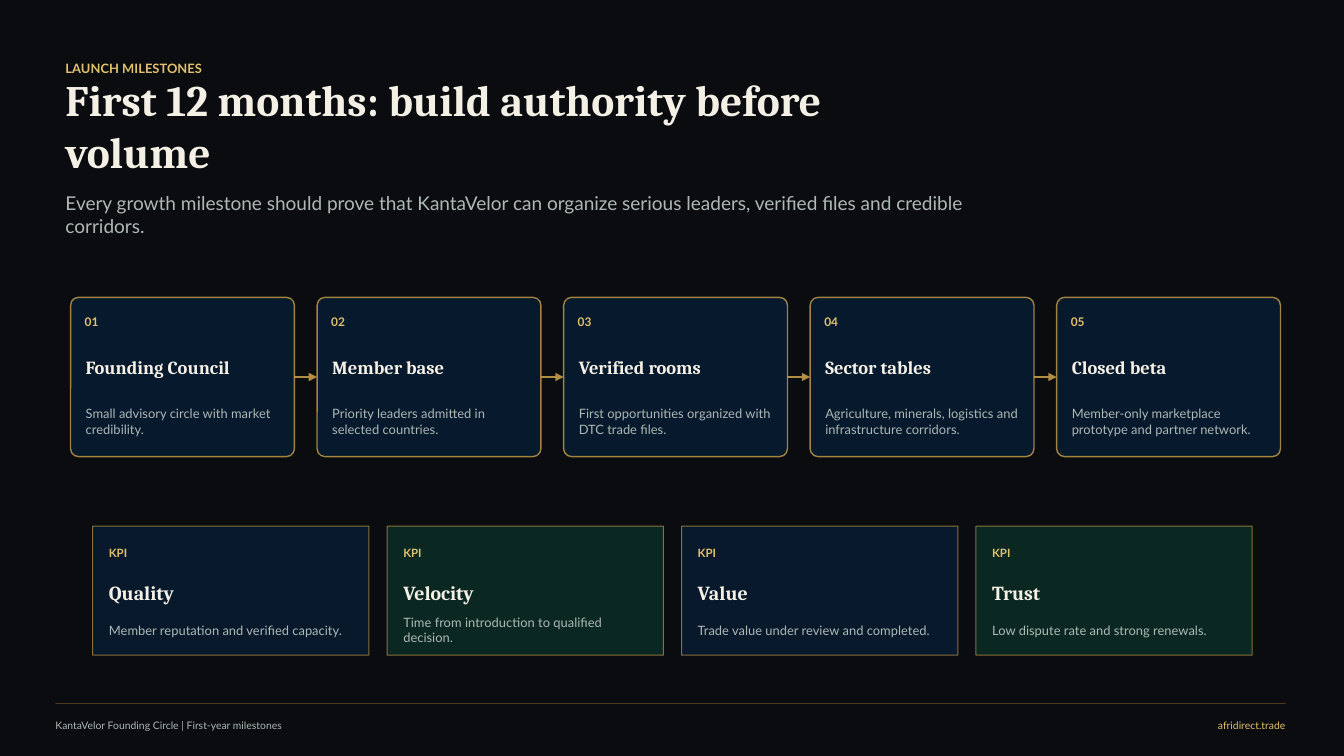
import pptx
import pptx.util
import pptx.dml.color
import pptx.enum.shapes
import pptx.enum.text
import pptx.oxml.ns
from lxml import etree

Inches = pptx.util.Inches
RGBColor = pptx.dml.color.RGBColor
qn = pptx.oxml.ns.qn
MSO_SHAPE = pptx.enum.shapes.MSO_SHAPE
STRAIGHT = pptx.enum.shapes.MSO_CONNECTOR.STRAIGHT
ANCHOR = pptx.enum.text.MSO_ANCHOR
ALIGN = pptx.enum.text.PP_ALIGN

BLACK = RGBColor(0x0A, 0x0C, 0x0F)
NAVY = RGBColor(0x07, 0x1A, 0x2D)
GREEN = RGBColor(0x0B, 0x2A, 0x22)
GOLD = RGBColor(0xC9, 0xA1, 0x4A)
LIGHT_GOLD = RGBColor(0xE2, 0xC1, 0x6D)
CREAM = RGBColor(0xF5, 0xF0, 0xE6)
GREY = RGBColor(0xAE, 0xB8, 0xB5)

presentation = pptx.Presentation()
presentation.slide_width = Inches(13.33)
presentation.slide_height = Inches(7.5)
slide = presentation.slides.add_slide(presentation.slide_layouts[6])
slide.background.fill.solid()
slide.background.fill.fore_color.rgb = BLACK


def add_text(text, left, top, width, height, size, color, font="Lato",
             bold=False, anchor=ANCHOR.MIDDLE, align=ALIGN.LEFT):
    frame = slide.shapes.add_textbox(
        Inches(left), Inches(top), Inches(width), Inches(height)).text_frame
    frame.margin_left = frame.margin_right = 0
    frame.margin_top = frame.margin_bottom = 0
    frame.word_wrap = True
    frame.vertical_anchor = anchor
    paragraph = frame.paragraphs[0]
    paragraph.text = text
    paragraph.alignment = align
    paragraph.font.name = font
    paragraph.font.size = pptx.util.Pt(size)
    paragraph.font.bold = bold
    paragraph.font.color.rgb = color


def set_style(shape, line_width, line_opacity, fill=None, fill_opacity=100):
    shape.line.color.rgb = GOLD
    shape.line.width = pptx.util.Pt(line_width)
    properties = shape._element.spPr
    opacities = [(properties.find(qn("a:ln")), line_opacity)]
    if fill is None:
        etree.SubElement(properties, qn("a:effectLst"))
    else:
        shape.shadow.inherit = False
        shape.fill.solid()
        shape.fill.fore_color.rgb = fill
        opacities.append((properties.find(qn("a:solidFill")), fill_opacity))
    for parent, opacity in opacities:
        color = next(parent.iter(qn("a:srgbClr")))
        etree.SubElement(color, qn("a:alpha"), val=str(opacity * 1000))


add_text("LAUNCH MILESTONES", 0.65, 0.55, 9, 0.25, 9.2, LIGHT_GOLD, bold=True)
add_text("First 12 months: build authority before volume",
         0.65, 0.88, 9, 0.72, 31, CREAM, "Cambria", True)
add_text("Every growth milestone should prove that KantaVelor can organize "
         "serious leaders, verified files and credible corridors.",
         0.65, 1.9, 9, 0.52, 13.6, GREY, anchor=ANCHOR.TOP)

milestones = [
    ("Founding Council", "Small advisory circle with market credibility."),
    ("Member base", "Priority leaders admitted in selected countries."),
    ("Verified rooms", "First opportunities organized with DTC trade files."),
    ("Sector tables",
     "Agriculture, minerals, logistics and infrastructure corridors."),
    ("Closed beta", "Member-only marketplace prototype and partner network."),
]
card_width = 2.22
card_gap = 0.225
card_pitch = card_width + card_gap
for index, (title, detail) in enumerate(milestones):
    left = 0.7 + index * card_pitch
    if index > 0:
        arrow = slide.shapes.add_connector(
            STRAIGHT, Inches(left - card_gap), Inches(3.74),
            Inches(left), Inches(3.74))
        set_style(arrow, 1.2, 88)
        etree.SubElement(arrow._element.spPr.find(qn("a:ln")),
                         qn("a:tailEnd"), type="triangle")
    card = slide.shapes.add_shape(
        MSO_SHAPE.ROUNDED_RECTANGLE, Inches(left), Inches(2.95),
        Inches(card_width), Inches(1.58))
    card.adjustments[0] = 0.05
    set_style(card, 1, 80, NAVY, 98)
    add_text(f"{index + 1:02d}", left + 0.14, 3.07, 0.42, 0.25, 8.5,
             LIGHT_GOLD, bold=True)
    add_text(title, left + 0.15, 3.4, 1.92, 0.48, 13.2, CREAM, "Cambria", True)
    add_text(detail, left + 0.15, 3.94, 1.92, 0.48, 9.2, GREY)

indicators = [
    ("Quality", "Member reputation and verified capacity.", NAVY),
    ("Velocity", "Time from introduction to qualified decision.", GREEN),
    ("Value", "Trade value under review and completed.", NAVY),
    ("Trust", "Low dispute rate and strong renewals.", GREEN),
]
for index, (title, detail, fill) in enumerate(indicators):
    left = 0.92 + index * 2.92
    panel = slide.shapes.add_shape(
        MSO_SHAPE.RECTANGLE, Inches(left), Inches(5.22),
        Inches(2.74), Inches(1.28))
    set_style(panel, 0.7, 65, fill, 95)
    text_left = left + 0.16
    add_text("KPI", text_left, 5.37, 2.42, 0.24, 8.2, LIGHT_GOLD, bold=True)
    add_text(title, text_left, 5.7, 2.42, 0.36, 14.2, CREAM, "Cambria", True)
    add_text(detail, text_left, 6.12, 2.42, 0.26, 9.2, GREY)

add_text("KantaVelor Founding Circle | First-year milestones",
         0.55, 7.12, 5.6, 0.16, 7.4, GREY)
add_text("afridirect.trade", 10.3, 7.12, 2.45, 0.16, 7.4, LIGHT_GOLD,
         align=ALIGN.RIGHT)
footer_rule = slide.shapes.add_connector(
    STRAIGHT, Inches(0.55), Inches(6.98), Inches(12.75), Inches(6.98))
set_style(footer_rule, 0.5, 32)

presentation.save("out.pptx")
